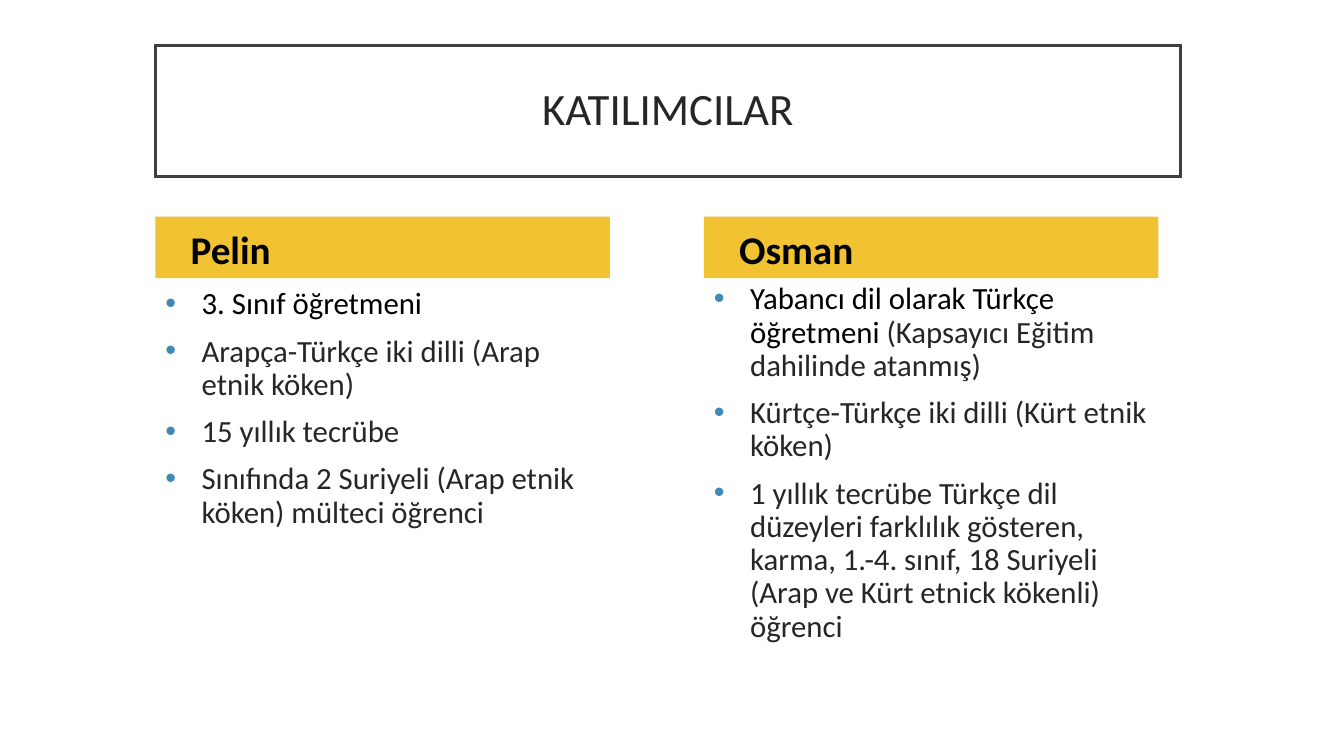
from dataclasses import dataclass

from lxml import etree
from pptx import Presentation
from pptx import util as u
from pptx.dml.color import RGBColor
from pptx.enum import text
from pptx.oxml import ns

BLACK = RGBColor(0x00, 0x00, 0x00)
DARK = RGBColor(0x26, 0x26, 0x26)
FRAME = RGBColor(0x3F, 0x3F, 0x3F)
WHITE = RGBColor(0xFF, 0xFF, 0xFF)
YELLOW = RGBColor(0xF1, 0xC2, 0x32)
BLUE = RGBColor(0x41, 0x8A, 0xB3)

FONT = "Calibri"
COLUMN_WIDTH = 4.51
HEADER_TOP = 2.15
HEADER_HEIGHT = 0.61


@dataclass(frozen=True)
class Span:
    text: str
    color: RGBColor = DARK


@dataclass(frozen=True)
class Participant:
    name: str
    left: float
    height: float
    inset: float
    header_idx: int
    list_idx: int
    items: tuple[tuple[Span, ...], ...]


PARTICIPANTS = (
    Participant("Pelin", 1.54, 3.57, 0.1, 1, 2, (
        (Span("3. Sınıf öğretmeni", BLACK),),
        (Span("Arapça-Türkçe iki dilli (Arap etnik köken)"),),
        (Span("15 yıllık tecrübe"),),
        (Span("Sınıfında 2 Suriyeli (Arap etnik köken) mülteci öğrenci"),),
    )),
    Participant("Osman", 6.98, 4.74, 0.05, 3, 4, (
        (Span("Yabancı dil olarak Türkçe öğretmeni ", BLACK),
         Span("(Kapsayıcı Eğitim dahilinde atanmış)")),
        (Span("Kürtçe-Türkçe iki dilli (Kürt etnik köken)"),),
        (Span("1 yıllık tecrübe Türkçe dil düzeyleri farklılık gösteren, karma, "
              "1.-4. sınıf, 18 Suriyeli (Arap ve Kürt etnick kökenli) öğrenci"),),
    )),
)


def place(sp, left: float, top: float, width: float, height: float) -> None:
    sp.left, sp.top = u.Inches(left), u.Inches(top)
    sp.width, sp.height = u.Inches(width), u.Inches(height)


def set_frame(tf, anchor, side: float, vertical: float) -> None:
    tf.word_wrap = True
    tf.auto_size = text.MSO_AUTO_SIZE.NONE
    tf.vertical_anchor = anchor
    tf.margin_left = tf.margin_right = u.Inches(side)
    tf.margin_top = tf.margin_bottom = u.Inches(vertical)


def set_paragraph(p, before: float, margin: float = 0, indent: float = 0) -> None:
    p.line_spacing = 0.9
    p.space_before = u.Pt(before)
    p.space_after = u.Pt(0)
    pPr = p._p.get_or_add_pPr()
    pPr.set("marL", str(u.Inches(margin)))
    pPr.set("indent", str(u.Inches(indent)))


def set_font(r, size: float, color: RGBColor, bold: bool = False) -> None:
    r.font.name = FONT
    r.font.size = u.Pt(size)
    r.font.bold = bold
    r.font.color.rgb = color


def add_bullet(p) -> None:
    pPr = p._p.get_or_add_pPr()
    color = etree.SubElement(pPr, ns.qn("a:buClr"))
    etree.SubElement(color, ns.qn("a:srgbClr"), val=str(BLUE))
    etree.SubElement(pPr, ns.qn("a:buFont"), typeface="Arial")
    etree.SubElement(pPr, ns.qn("a:buChar"), char="•")


def draw_title(sp) -> None:
    place(sp, 1.54, 0.45, 10.17, 1.3)
    sp.fill.solid()
    sp.fill.fore_color.rgb = WHITE
    sp.line.color.rgb = FRAME
    sp.line.width = u.Pt(2.5)
    etree.SubElement(sp.line._ln, ns.qn("a:miter"), lim="800000")
    tf = sp.text_frame
    set_frame(tf, text.MSO_ANCHOR.MIDDLE, 0.2, 0.2)
    tf.text = "KATILIMCILAR"
    p = tf.paragraphs[0]
    p.alignment = text.PP_ALIGN.CENTER
    set_paragraph(p, 0)
    set_font(p.runs[0], 32, DARK)


def draw_header(sp, person: Participant) -> None:
    place(sp, person.left, HEADER_TOP, COLUMN_WIDTH, HEADER_HEIGHT)
    sp.fill.solid()
    sp.fill.fore_color.rgb = YELLOW
    tf = sp.text_frame
    set_frame(tf, text.MSO_ANCHOR.BOTTOM, 0.1, 0.05)
    tf.text = person.name
    p = tf.paragraphs[0]
    set_paragraph(p, 10, 0.25)
    set_font(p.runs[0], 28, BLACK, True)


def draw_list(sp, person: Participant) -> None:
    place(sp, person.left, HEADER_TOP + HEADER_HEIGHT, COLUMN_WIDTH, person.height)
    tf = sp.text_frame
    set_frame(tf, text.MSO_ANCHOR.TOP, 0.1, person.inset)
    for i, item in enumerate(person.items):
        p = tf.add_paragraph() if i else tf.paragraphs[0]
        set_paragraph(p, 10, 0.36, -0.36)
        add_bullet(p)
        for span in item:
            r = p.add_run()
            r.text = span.text
            set_font(r, 22, span.color)


def main() -> None:
    prs = Presentation()
    prs.slide_width, prs.slide_height = u.Inches(13.33), u.Inches(7.5)
    s = prs.slides.add_slide(prs.slide_layouts.get_by_name("Comparison"))
    s.background.fill.solid()
    s.background.fill.fore_color.rgb = WHITE
    draw_title(s.shapes.title)
    holders = {sp.placeholder_format.idx: sp for sp in s.placeholders}
    for person in PARTICIPANTS:
        draw_header(holders[person.header_idx], person)
        draw_list(holders[person.list_idx], person)
    prs.save("out.pptx")


if __name__ == "__main__":
    main()
